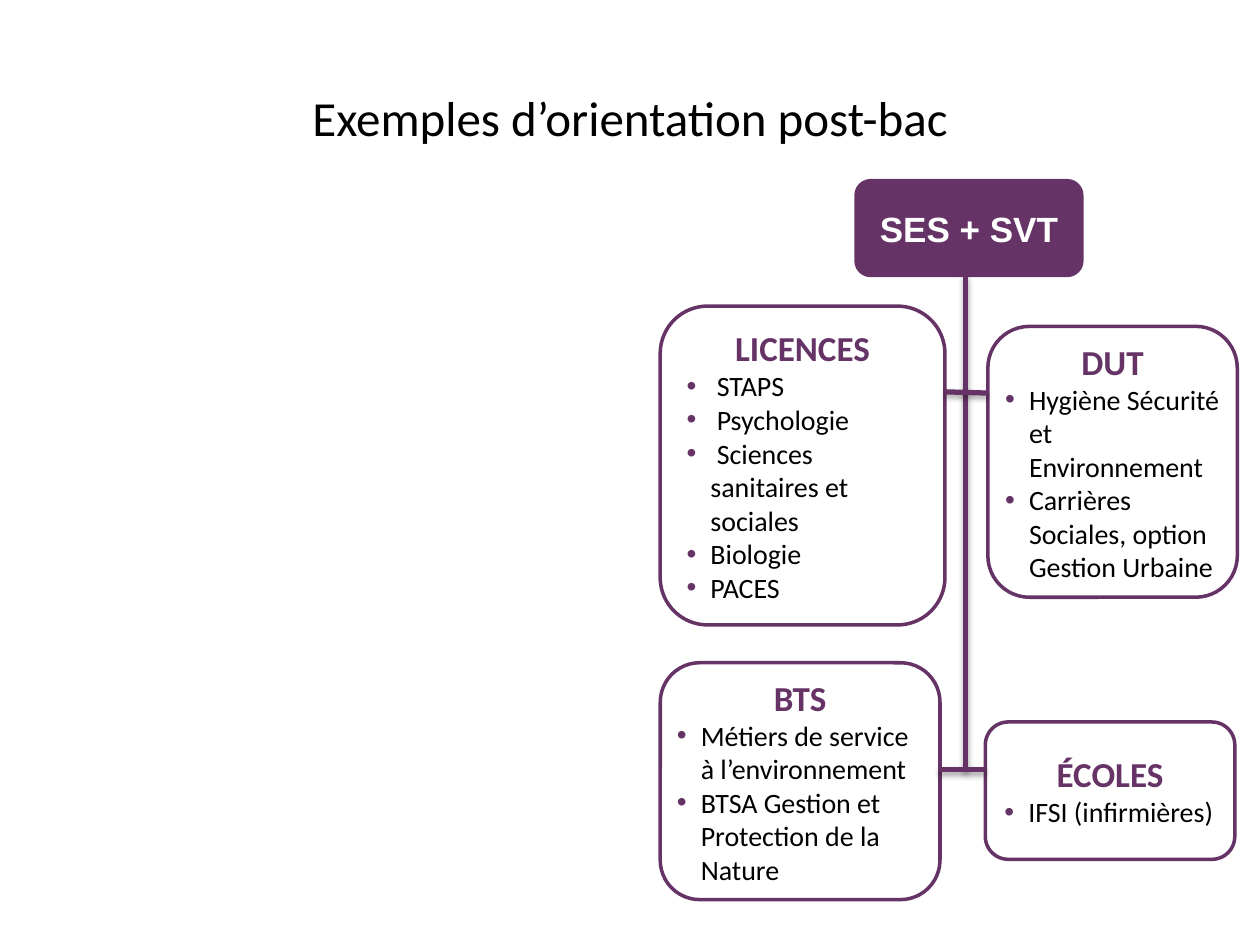
from dataclasses import dataclass

from lxml.etree import SubElement
from pptx import Presentation
from pptx.dml.color import RGBColor
from pptx.enum.shapes import MSO_CONNECTOR, MSO_SHAPE
from pptx.enum.text import MSO_ANCHOR, MSO_AUTO_SIZE, PP_ALIGN
from pptx.oxml.ns import qn
from pptx.slide import Slide
from pptx.text.text import _Paragraph
from pptx.util import Inches, Pt


@dataclass(frozen=True)
class Theme:
    purple: RGBColor = RGBColor(0x66, 0x33, 0x66)
    white: RGBColor = RGBColor(255, 255, 255)
    black: RGBColor = RGBColor(0, 0, 0)
    body_font: str = "Calibri"
    subject_font: str = "Arial"
    title_size: int = 28
    heading_size: int = 20
    item_size: int = 16
    border: int = 2
    branch: int = 3
    indent: float = 0.19


@dataclass(frozen=True)
class Pathway:
    heading: str
    items: tuple[str, ...]
    left: float
    top: float
    width: float
    height: float
    side_inset: float = 0.1
    end_inset: float = 0.05


@dataclass(frozen=True)
class Branch:
    x1: float
    y1: float
    x2: float
    y2: float


THEME = Theme()

PATHWAYS = (
    Pathway("LICENCES",
            (" STAPS", " Psychologie", " Sciences sanitaires et sociales",
             "Biologie", "PACES"),
            5.24, 2.43, 2.26, 2.53),
    Pathway("ÉCOLES", ("IFSI (infirmières)",), 7.82, 5.73, 1.98, 1.09),
    Pathway("DUT",
            ("Hygiène Sécurité et Environnement",
             "Carrières Sociales, option Gestion Urbaine"),
            7.84, 2.59, 1.98, 2.15, 0.04, 0),
    Pathway("BTS",
            ("Métiers de service à l’environnement",
             "BTSA Gestion et Protection de la Nature"),
            5.24, 5.26, 2.22, 1.88, 0.04, 0),
)

BRANCHES = (
    Branch(7.66, 2.19, 7.66, 6.11),
    Branch(7.82, 6.11, 7.45, 6.11),
    Branch(7.84, 3.12, 7.5, 3.11),
)


def style(paragraph: _Paragraph, size: int, color: RGBColor, bold: bool = False,
          font: str = THEME.body_font, align: PP_ALIGN = PP_ALIGN.CENTER) -> None:
    paragraph.alignment = align
    paragraph.font.name = font
    paragraph.font.size = Pt(size)
    paragraph.font.bold = bold
    paragraph.font.color.rgb = color


def hang(paragraph: _Paragraph, bulleted: bool) -> None:
    """Give a hanging indent and, if asked, a purple bullet."""
    properties = paragraph._p.get_or_add_pPr()
    properties.set("marL", str(Inches(THEME.indent)))
    properties.set("indent", str(-Inches(THEME.indent)))
    if bulleted:
        color = SubElement(properties, qn("a:buClr"))
        SubElement(color, qn("a:srgbClr"), val=str(THEME.purple))
        SubElement(properties, qn("a:buFont"), typeface="Arial")
        SubElement(properties, qn("a:buChar"), char="•")


def add_title(slide: Slide, text: str) -> None:
    title = slide.shapes.title
    title.left, title.top = Inches(0.5), Inches(0.3)
    title.width, title.height = Inches(9), Inches(1.25)
    title.text_frame.text = text
    title.text_frame.vertical_anchor = MSO_ANCHOR.MIDDLE
    style(title.text_frame.paragraphs[0], THEME.title_size, THEME.black)


def add_subject(slide: Slide, text: str) -> None:
    subject = slide.shapes.add_shape(
        MSO_SHAPE.ROUNDED_RECTANGLE,
        Inches(6.78), Inches(1.42), Inches(1.82), Inches(0.78))
    subject.shadow.inherit = False
    subject.fill.solid()
    subject.fill.fore_color.rgb = THEME.purple
    subject.line.fill.background()
    subject.text_frame.text = text
    subject.text_frame.vertical_anchor = MSO_ANCHOR.MIDDLE
    style(subject.text_frame.paragraphs[0], THEME.heading_size, THEME.white,
          bold=True, font=THEME.subject_font)


def add_pathway(slide: Slide, pathway: Pathway) -> None:
    card = slide.shapes.add_shape(
        MSO_SHAPE.ROUNDED_RECTANGLE,
        Inches(pathway.left), Inches(pathway.top),
        Inches(pathway.width), Inches(pathway.height))
    card.shadow.inherit = False
    card.fill.solid()
    card.fill.fore_color.rgb = THEME.white
    card.line.color.rgb = THEME.purple
    card.line.width = Pt(THEME.border)

    frame = card.text_frame
    frame.word_wrap = True
    frame.auto_size = MSO_AUTO_SIZE.SHAPE_TO_FIT_TEXT
    frame.vertical_anchor = MSO_ANCHOR.MIDDLE
    frame.margin_left = frame.margin_right = Inches(pathway.side_inset)
    frame.margin_top = frame.margin_bottom = Inches(pathway.end_inset)

    heading = frame.paragraphs[0]
    heading.text = pathway.heading
    hang(heading, bulleted=False)
    style(heading, THEME.heading_size, THEME.purple, bold=True)
    for item in pathway.items:
        entry = frame.add_paragraph()
        entry.text = item
        hang(entry, bulleted=True)
        style(entry, THEME.item_size, THEME.black, align=PP_ALIGN.LEFT)


def add_branch(slide: Slide, branch: Branch) -> None:
    """Draw a purple line with a soft shadow below it."""
    connector = slide.shapes.add_connector(
        MSO_CONNECTOR.STRAIGHT, Inches(branch.x1), Inches(branch.y1),
        Inches(branch.x2), Inches(branch.y2))
    connector.line.color.rgb = THEME.purple
    connector.line.width = Pt(THEME.branch)
    effects = SubElement(connector._element.spPr, qn("a:effectLst"))
    shadow = SubElement(effects, qn("a:outerShdw"), blurRad=str(Pt(3.1)),
                        dist=str(Pt(1.8)), dir="5400000", rotWithShape="0")
    color = SubElement(shadow, qn("a:srgbClr"), val=str(THEME.black))
    SubElement(color, qn("a:alpha"), val="35000")


def main() -> None:
    presentation = Presentation()
    presentation.slide_width, presentation.slide_height = Inches(10), Inches(7.5)
    slide = presentation.slides.add_slide(
        presentation.slide_layouts.get_by_name("Title Only"))
    add_title(slide, "Exemples d’orientation post-bac")
    add_subject(slide, "SES + SVT")
    for pathway in PATHWAYS:
        add_pathway(slide, pathway)
    for branch in BRANCHES:
        add_branch(slide, branch)
    presentation.save("out.pptx")


if __name__ == "__main__":
    main()
